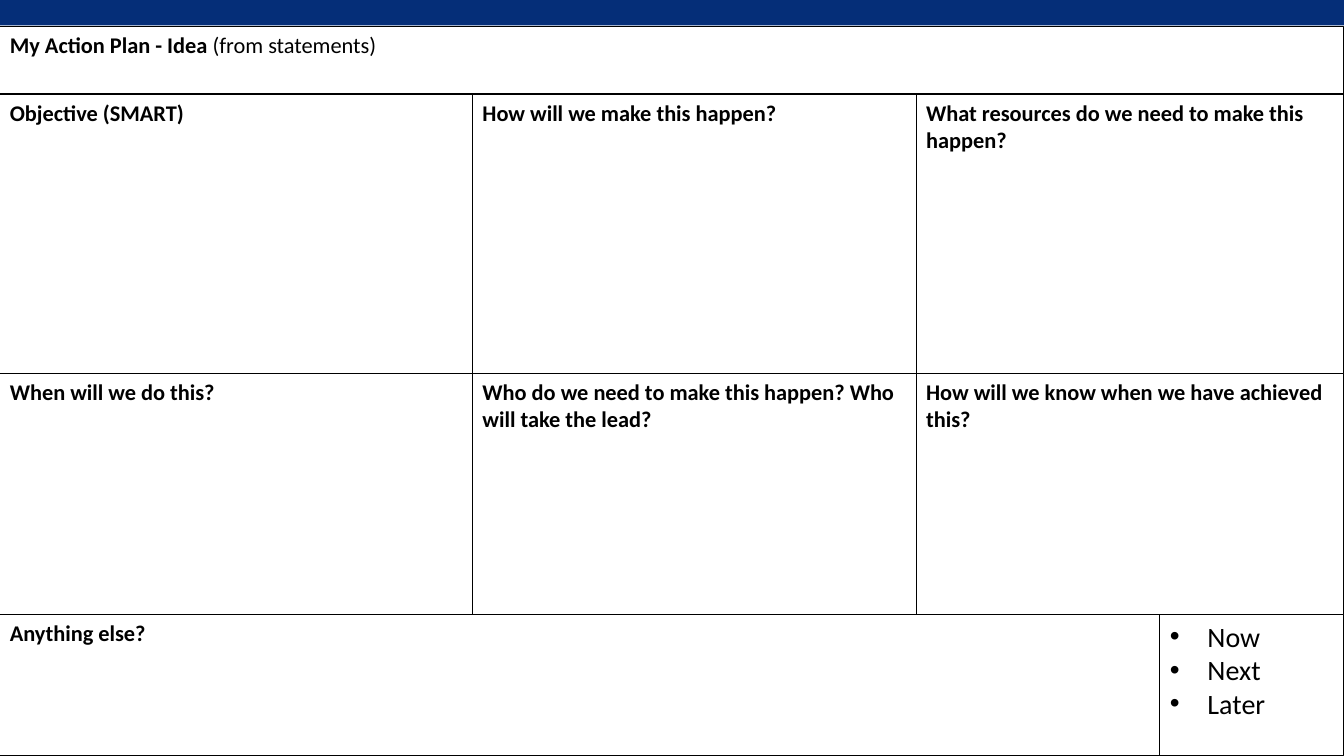
import dataclasses
import itertools

import pptx
import pptx.dml.color
import pptx.enum.shapes
import pptx.enum.text
import pptx.oxml.ns
import pptx.shapes.autoshape
import pptx.slide
import pptx.text.text
import pptx.util
from lxml import etree

Cm = pptx.util.Cm
NAVY = pptx.dml.color.RGBColor(0x05, 0x2E, 0x78)
WHITE = pptx.dml.color.RGBColor(0xFF, 0xFF, 0xFF)
BLACK = pptx.dml.color.RGBColor(0x00, 0x00, 0x00)
FONT = "Calibri"
WIDTH, HEIGHT = 33.87, 19.05
BAR = 0.64
COLS = (0, 11.91, 23.09, WIDTH)
ROWS = (0.66, 2.37, 9.41, 15.48, HEIGHT)
SPLIT = 29.23
INDENT = 0.95

TOPICS = (
    (
        "Objective (SMART)",
        "How will we make this happen?",
        "What resources do we need to make this happen?",
    ),
    (
        "When will we do this?",
        "Who do we need to make this happen? Who will take the lead?",
        "How will we know when we have achieved this?",
    ),
)


@dataclasses.dataclass(frozen=True)
class Panel:
    left: float
    top: float
    right: float
    bottom: float
    lines: tuple[str, ...]
    extra: str = ""
    size: int = 16
    bold: bool = True
    bullet: bool = False


def draw_rect(
    slide: pptx.slide.Slide,
    left: float,
    top: float,
    right: float,
    bottom: float,
    fill: pptx.dml.color.RGBColor,
) -> pptx.shapes.autoshape.Shape:
    shape = slide.shapes.add_shape(
        pptx.enum.shapes.MSO_SHAPE.RECTANGLE,
        Cm(left), Cm(top), Cm(right - left), Cm(bottom - top),
    )
    shape.shadow.inherit = False
    shape.fill.solid()
    shape.fill.fore_color.rgb = fill
    shape.line.fill.background()
    return shape


def add_text(
    para: pptx.text.text._Paragraph,
    text: str,
    *,
    size: int = 16,
    bold: bool = True,
    bullet: bool = False,
) -> None:
    para.alignment = pptx.enum.text.PP_ALIGN.LEFT
    run = para.add_run()
    run.text = text
    run.font.name = FONT
    run.font.size = pptx.util.Pt(size)
    run.font.bold = bold
    run.font.color.rgb = BLACK
    if bullet:
        props = para._p.get_or_add_pPr()
        props.set("marL", str(Cm(INDENT)))
        props.set("indent", str(-Cm(INDENT)))
        face = etree.SubElement(props, pptx.oxml.ns.qn("a:buFont"))
        face.set("typeface", "Arial")
        mark = etree.SubElement(props, pptx.oxml.ns.qn("a:buChar"))
        mark.set("char", "•")


def draw_panel(slide: pptx.slide.Slide, panel: Panel) -> None:
    shape = draw_rect(
        slide, panel.left, panel.top, panel.right, panel.bottom, WHITE
    )
    shape.line.color.rgb = BLACK
    shape.line.width = pptx.util.Pt(0.75)
    frame = shape.text_frame
    frame.word_wrap = True
    frame.vertical_anchor = pptx.enum.text.MSO_ANCHOR.TOP
    for index, line in enumerate(panel.lines):
        para = frame.add_paragraph() if index else frame.paragraphs[0]
        add_text(
            para, line,
            size=panel.size, bold=panel.bold, bullet=panel.bullet,
        )
    if panel.extra:
        add_text(frame.paragraphs[0], panel.extra, size=panel.size, bold=False)


def list_panels() -> list[Panel]:
    header = Panel(
        0, ROWS[0], WIDTH, ROWS[1],
        ("My Action Plan - Idea",), extra=" (from statements)",
    )
    grid = [
        Panel(left, top, right, bottom, (topic,))
        for (top, bottom), topics in zip(itertools.pairwise(ROWS[1:4]), TOPICS)
        for (left, right), topic in zip(itertools.pairwise(COLS), topics)
    ]
    notes = Panel(0, ROWS[3], SPLIT, HEIGHT, ("Anything else?",))
    timing = Panel(
        SPLIT, ROWS[3], WIDTH, HEIGHT, ("Now", "Next", "Later"),
        size=20, bold=False, bullet=True,
    )
    return [header, *grid, notes, timing]


def main() -> None:
    deck = pptx.Presentation()
    deck.slide_width, deck.slide_height = Cm(WIDTH), Cm(HEIGHT)
    slide = deck.slides.add_slide(deck.slide_layouts[6])
    draw_rect(slide, 0, 0, WIDTH, BAR, NAVY)
    for panel in list_panels():
        draw_panel(slide, panel)
    deck.save("out.pptx")


if __name__ == "__main__":
    main()
